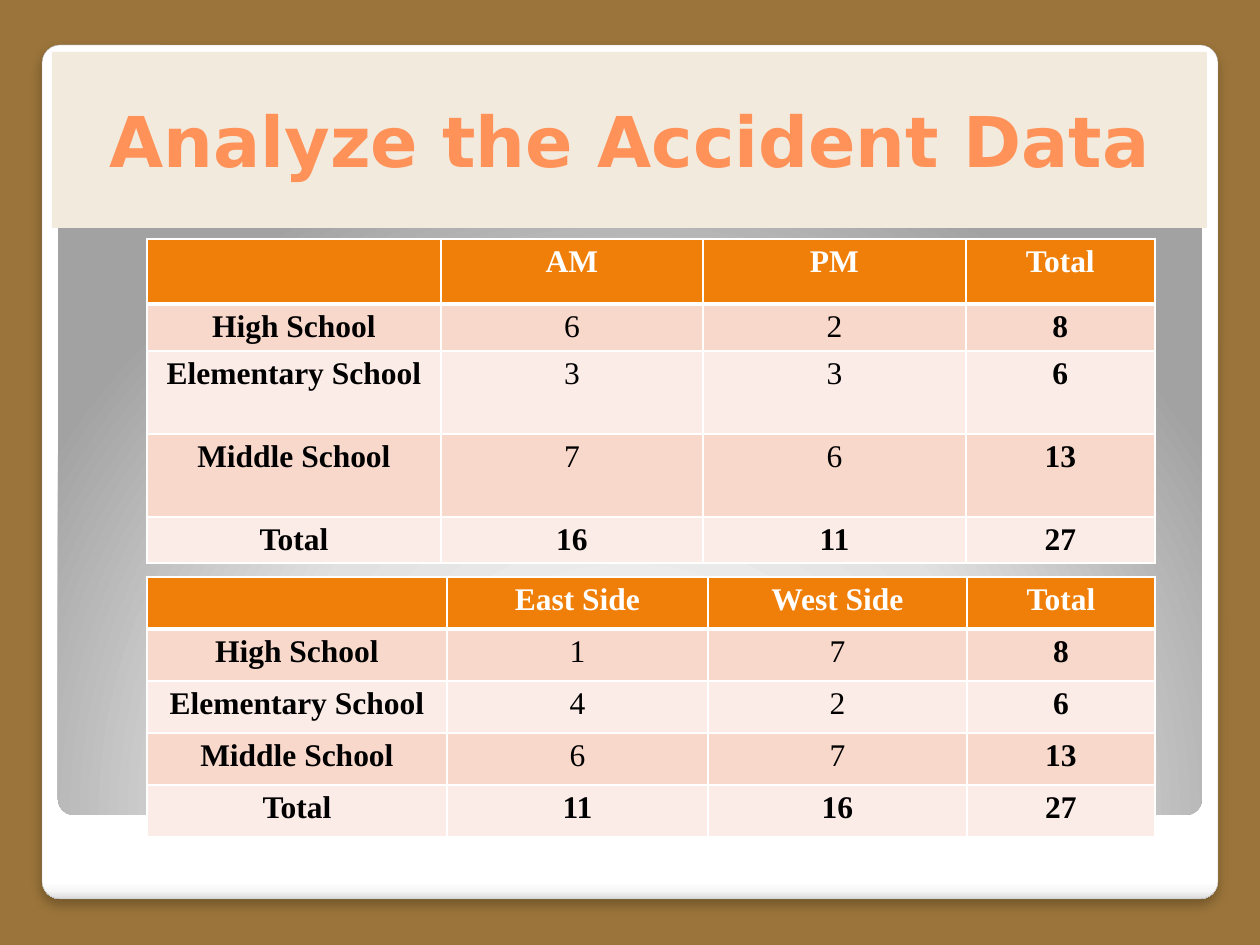
from pptx import Presentation
from pptx.dml.color import RGBColor
from pptx.enum.shapes import MSO_SHAPE
from pptx.enum.text import MSO_ANCHOR, PP_ALIGN
from pptx.oxml import parse_xml
from pptx.oxml.ns import nsdecls, qn
from pptx.util import Emu, Pt

RECT = MSO_SHAPE.RECTANGLE
ROUND = MSO_SHAPE.ROUNDED_RECTANGLE
CENTER = PP_ALIGN.CENTER
MIDDLE = MSO_ANCHOR.MIDDLE
NS = nsdecls("a")
HEAD = "F07F09"
BANDS = ("FCECE7", "F9D8CC")
DOWN = '<a:lin ang="5400000" scaled="0"/>'
GLOW = ('<a:path path="circle"><a:fillToRect l="50000" t="175000" '
        'r="50000" b="-75000"/></a:path>')
TIMES = [
    ["", "AM", "PM", "Total"],
    ["High School", "6", "2", "8"],
    ["Elementary School", "3", "3", "6"],
    ["Middle School", "7", "6", "13"],
    ["Total", "16", "11", "27"],
]
SIDES = [
    ["", "East Side", "West Side", "Total"],
    ["High School", "1", "7", "8"],
    ["Elementary School", "4", "2", "6"],
    ["Middle School", "6", "7", "13"],
    ["Total", "11", "16", "27"],
]


def px(n):
    """Turn pixels into EMU."""
    return Emu(round(n * 914400 / 126))


def color(code):
    """Turn a hex string into a colour."""
    return RGBColor.from_string(code)


def style(para, face, size, code, bold):
    """Centre a paragraph and set its font."""
    para.alignment = CENTER
    font = para.font
    font.name, font.size, font.bold = face, Pt(size), bold
    font.color.rgb = color(code)


def add_box(slide, kind, box):
    """Add a shape without line or shadow."""
    shape = slide.shapes.add_shape(kind, *map(px, box))
    shape.shadow.inherit = False
    shape.line.fill.background()
    return shape


def add_panel(slide, box, stops, shade):
    """Add a rounded panel with a gradient fill."""
    shape = add_box(slide, ROUND, box)
    shape.adjustments[0] = 0.021
    shape.fill.background()
    marks = "".join(
        f'<a:gs pos="{pos * 1000}"><a:srgbClr val="{code}"/></a:gs>'
        for pos, code in stops)
    props = shape._element.spPr
    props.replace(props.find(qn("a:noFill")), parse_xml(
        f'<a:gradFill {NS} rotWithShape="1"><a:gsLst>{marks}</a:gsLst>'
        f'{shade}</a:gradFill>'))
    return shape


def add_shadow(shape):
    """Add a soft shadow below a shape."""
    shape._element.spPr.find(qn("a:effectLst")).append(parse_xml(
        f'<a:outerShdw {NS} blurRad="{Pt(6)}" dist="{Pt(4)}" dir="5400000" '
        'algn="t" rotWithShape="0"><a:srgbClr val="000000">'
        '<a:alpha val="25000"/></a:srgbClr></a:outerShdw>'))


def add_title(slide, box, text):
    """Add the title band."""
    shape = add_box(slide, RECT, box)
    shape.fill.solid()
    shape.fill.fore_color.rgb = color("F3EADE")
    frame = shape.text_frame
    frame.word_wrap = True
    frame.vertical_anchor = MIDDLE
    frame.text = text
    style(frame.paragraphs[0], "DejaVu Sans", 40, "FF9258", True)


def add_edges(cell, row):
    """Draw white cell borders, thick below the header."""
    top = 3 if row == 1 else 1
    low = 3 if row == 0 else 1
    for side, width in zip("LRTB", (1, 1, top, low)):
        cell._tc.get_or_add_tcPr().append(parse_xml(
            f'<a:ln{side} {NS} w="{Pt(width)}"><a:solidFill>'
            f'<a:srgbClr val="FFFFFF"/></a:solidFill></a:ln{side}>'))


def fill_cell(cell, text, row, bold):
    """Set the text, borders and fill of a cell."""
    cell.margin_left = cell.margin_right = px(9)
    cell.margin_top = cell.margin_bottom = 0
    cell.text = text
    para = cell.text_frame.paragraphs[0]
    para.line_spacing = 1.15
    ink = "000000" if row else "FFFFFF"
    style(para, "Times New Roman", 18, ink, bold)
    add_edges(cell, row)
    cell.fill.solid()
    cell.fill.fore_color.rgb = color(BANDS[row % 2] if row else HEAD)


def add_grid(slide, top, cols, rows, data):
    """Add a banded table with bold outer rows and columns."""
    box = (147, top, sum(cols), sum(rows))
    table = slide.shapes.add_table(
        len(rows), len(cols), *map(px, box)).table
    for col, width in zip(table.columns, cols):
        col.width = px(width)
    for row, height in zip(table.rows, rows):
        row.height = px(height)
    for r, line in enumerate(data):
        for c, text in enumerate(line):
            bold = r in (0, len(rows) - 1) or c in (0, len(cols) - 1)
            fill_cell(table.cell(r, c), text, r, bold)


def main():
    """Build and save the slide."""
    deck = Presentation()
    deck.slide_width, deck.slide_height = px(1260), px(945)
    slide = deck.slides.add_slide(deck.slide_layouts[6])
    back = slide.background.fill
    back.solid()
    back.fore_color.rgb = color("9A743A")
    card = add_panel(slide, (42, 45, 1176, 854), [
        (0, "FFFFFF"), (98, "FFFFFF"), (99, "F7F7F7"), (100, "DADADA")], DOWN)
    card.line.color.rgb = color("A4A4A4")
    card.line.width = Pt(0.16)
    add_shadow(card)
    add_panel(slide, (58, 59, 1144, 756), [
        (0, "FFFFFF"), (55, "E1E1E1"), (100, "A2A2A2")], GLOW)
    add_title(slide, (52, 52, 1155, 176), "Analyze the Accident Data")
    add_grid(slide, 239, (294, 262, 263, 189), (65, 47, 83, 83, 46), TIMES)
    add_grid(slide, 577, (300, 261, 259, 188), (52,) * 5, SIDES)
    deck.save("out.pptx")


if __name__ == "__main__":
    main()
